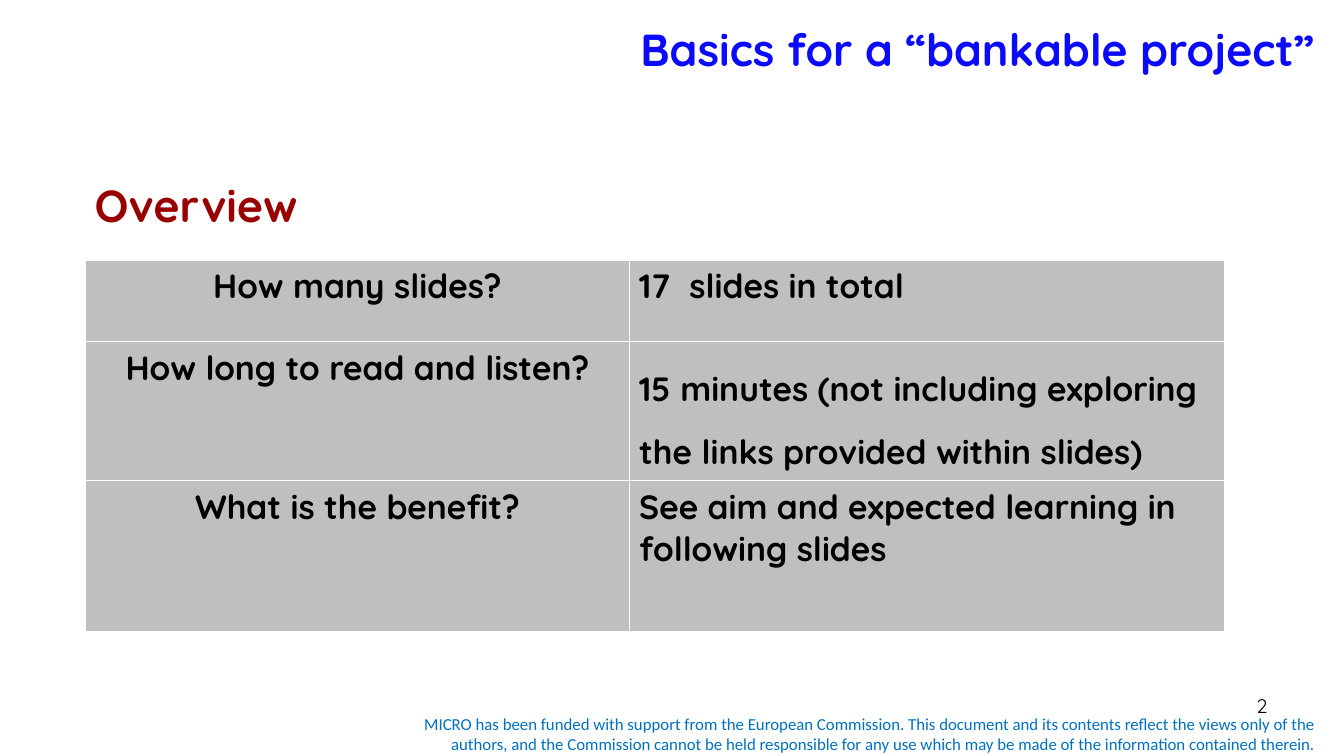
"""Build the overview slide of the bankable project course."""
from lxml.etree import SubElement
from pptx import Presentation
from pptx.dml.color import RGBColor
from pptx.enum.text import MSO_ANCHOR, PP_ALIGN
from pptx.oxml.ns import qn
from pptx.util import Pt

EMU_PER_PX = 9144
COLORS = {
    "title": "0B0AFD",
    "heading": "990000",
    "text": "000000",
    "cell": "BFBFBF",
    "border": "FFFFFF",
    "footer": "0070C0",
}
COLUMN_WIDTHS = (539, 591)
ROW_HEIGHTS = (81, 138, 150)
OVERVIEW = (
    ("How many slides?", "17  slides in total", 1.0),
    ("How long to read and listen?",
     "15 minutes (not including exploring the links provided within slides)", 1.5),
    ("What is the benefit?", "See aim and expected learning in following slides", 1.0),
)
FUNDING_NOTE = (
    "MICRO has been funded with support from the European Commission. "
    "This document and its contents reflect the views only of the authors, "
    "and the Commission cannot be held responsible for any use which may be "
    "made of the information contained therein."
)


def px(length):
    return length * EMU_PER_PX


def write_text(text_frame, text, size, color, bold=False, align=PP_ALIGN.LEFT, font_name="Quicksand"):
    text_frame.text = text
    text_frame.word_wrap = True
    paragraph = text_frame.paragraphs[0]
    paragraph.alignment = align
    for run in paragraph.runs:
        run.font.name = font_name
        run.font.size = Pt(size)
        run.font.bold = bold
        run.font.color.rgb = RGBColor.from_string(COLORS[color])
    return paragraph


def add_title(slide, text, left, top, width, height):
    title = slide.shapes.title
    title.left, title.top, title.width, title.height = map(px, (left, top, width, height))
    text_frame = title.text_frame
    text_frame.vertical_anchor = MSO_ANCHOR.MIDDLE
    text_frame.margin_bottom = px(34)
    write_text(text_frame, text, 32, "title", bold=True, align=PP_ALIGN.RIGHT)


def add_label(slide, text, box, size, color, anchor=MSO_ANCHOR.TOP, **style):
    label = slide.shapes.add_textbox(*map(px, box))
    label.text_frame.vertical_anchor = anchor
    write_text(label.text_frame, text, size, color, **style)


def set_borders(cell):
    properties = cell._tc.get_or_add_tcPr()
    for side in ("lnL", "lnR", "lnT", "lnB"):
        line = SubElement(properties, qn(f"a:{side}"), w=str(Pt(1)))
        fill = SubElement(line, qn("a:solidFill"))
        SubElement(fill, qn("a:srgbClr"), val=COLORS["border"])


def fill_cell(cell, text, align, line_spacing=1.0):
    set_borders(cell)
    cell.fill.solid()
    cell.fill.fore_color.rgb = RGBColor.from_string(COLORS["cell"])
    paragraph = write_text(cell.text_frame, text, 24, "text", bold=True, align=align)
    paragraph.line_spacing = line_spacing


def add_overview_table(slide, left, top):
    size = px(sum(COLUMN_WIDTHS)), px(sum(ROW_HEIGHTS))
    frame = slide.shapes.add_table(len(OVERVIEW), len(COLUMN_WIDTHS), px(left), px(top), *size)
    table = frame.table
    for column, width in zip(table.columns, COLUMN_WIDTHS):
        column.width = px(width)
    for row, height, (question, answer, spacing) in zip(table.rows, ROW_HEIGHTS, OVERVIEW):
        row.height = px(height)
        fill_cell(row.cells[0], question, PP_ALIGN.CENTER)
        fill_cell(row.cells[1], answer, PP_ALIGN.LEFT, spacing)


def main():
    presentation = Presentation()
    presentation.slide_width, presentation.slide_height = px(1333), px(750)
    slide = presentation.slides.add_slide(presentation.slide_layouts[5])
    add_title(slide, "Basics for a “bankable project”", 114, 0, 1200, 125)
    add_label(slide, FUNDING_NOTE, (375, 703, 940, 50), 12, "footer",
              anchor=MSO_ANCHOR.MIDDLE, align=PP_ALIGN.RIGHT, font_name="Calibri")
    add_overview_table(slide, 85, 258)
    add_label(slide, "2", (956, 683, 311, 52), 14, "text", align=PP_ALIGN.RIGHT)
    add_label(slide, "Overview", (84, 171, 290, 64), 32, "heading", bold=True)
    presentation.save("out.pptx")


if __name__ == "__main__":
    main()
